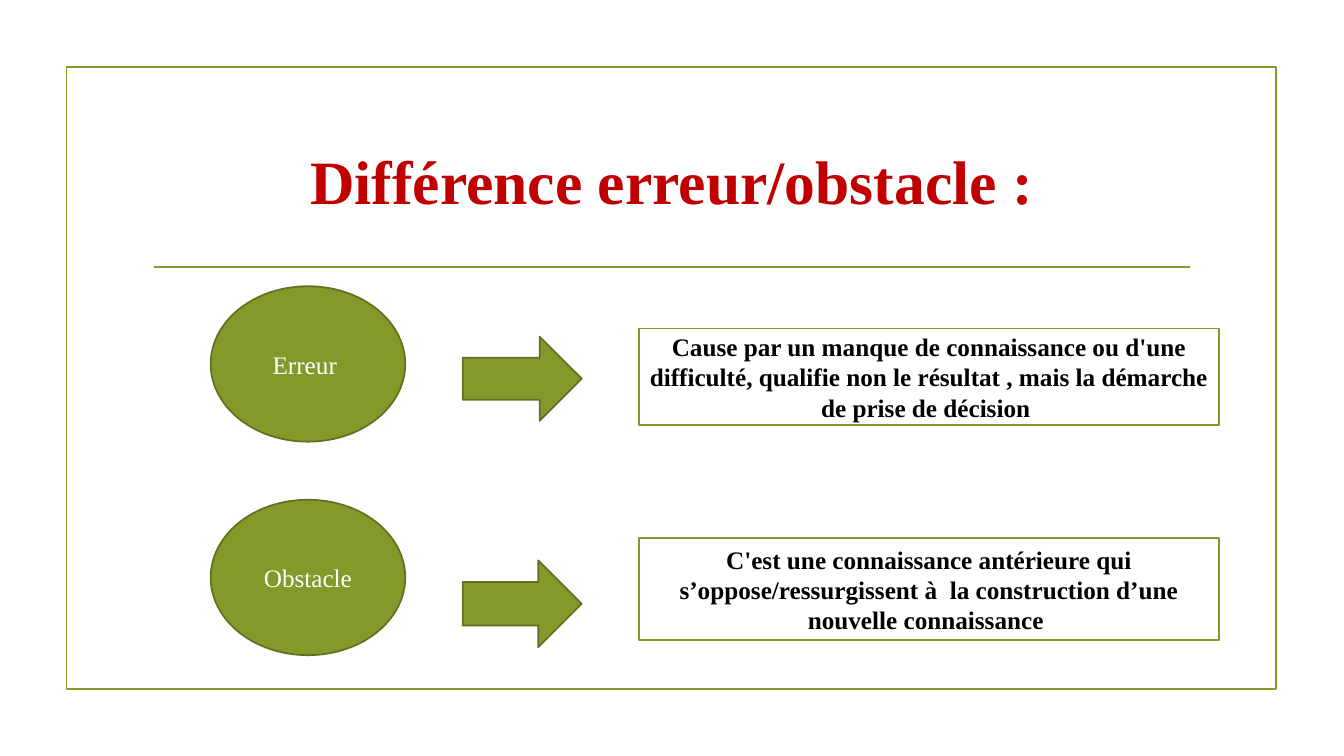
from dataclasses import dataclass

from lxml import etree
from pptx import Presentation
from pptx.dml.color import RGBColor
from pptx.enum import shapes, text
from pptx.oxml import ns
from pptx.util import Pt


@dataclass(frozen=True)
class Theme:
    font: str = "Times New Roman"
    green: RGBColor = RGBColor(0x83, 0x99, 0x2A)
    dark_green: RGBColor = RGBColor(0x61, 0x71, 0x1F)
    red: RGBColor = RGBColor(0xC0, 0x00, 0x00)
    white: RGBColor = RGBColor(0xFF, 0xFF, 0xFF)
    black: RGBColor = RGBColor(0x00, 0x00, 0x00)
    title_size: float = 44
    text_size: float = 18
    line_width: float = 1.25


THEME = Theme()
OVAL_LEFT, ARROW_LEFT, BOX_LEFT = 150.5, 330.5, 456.5

# Term, definition, then (top, height) of the oval, the arrow and the box
ROWS = [
    ("Erreur ",
     "Cause par un manque de connaissance ou d'une difficulté, "
     "qualifie non le résultat , mais la démarche de prise de décision ",
     (204.5, 111), (240.5, 60), (234.7, 69)),
    ("Obstacle",
     "C'est une connaissance antérieure qui s’oppose/ressurgissent à  "
     "la construction d’une nouvelle connaissance ",
     (357, 111), (400.3, 62), (384.5, 72.7)),
]


def write_text(shape, content, size, color, bold=False):
    """Fill a shape with one centred paragraph."""
    frame = shape.text_frame
    frame.word_wrap = True
    frame.auto_size = text.MSO_AUTO_SIZE.NONE
    frame.vertical_anchor = text.MSO_ANCHOR.MIDDLE
    paragraph = frame.paragraphs[0]
    paragraph.alignment = text.PP_ALIGN.CENTER
    run = paragraph.add_run()
    run.text = content
    run.font.name = THEME.font
    run.font.size = Pt(size)
    run.font.bold = bold
    run.font.color.rgb = color


def add_figure(slide, kind, left, top, width, height, fill, line):
    """Add a preset shape; a fill of None leaves it hollow."""
    shape = slide.shapes.add_shape(kind, Pt(left), Pt(top), Pt(width), Pt(height))
    shape.shadow.inherit = False
    if fill is None:
        shape.fill.background()
    else:
        shape.fill.solid()
        shape.fill.fore_color.rgb = fill
    shape.line.color.rgb = line
    shape.line.width = Pt(THEME.line_width)
    return shape


def add_rule(slide, left, right, y):
    rule = slide.shapes.add_connector(
        shapes.MSO_CONNECTOR.STRAIGHT, Pt(left), Pt(y), Pt(right), Pt(y))
    rule.line.color.rgb = THEME.green
    rule.line.width = Pt(THEME.line_width)
    etree.SubElement(rule.element.spPr, ns.qn("a:effectLst"))


def place_title(slide, content):
    title = slide.shapes.title
    title.left, title.top, title.width, title.height = Pt(102), Pt(77), Pt(756), Pt(103)
    write_text(title, content, THEME.title_size, THEME.red, bold=True)


def add_definition_row(slide, term, definition, oval_span, arrow_span, box_span):
    """Add an oval holding the term, an arrow and the boxed definition."""
    kinds = shapes.MSO_SHAPE
    oval = add_figure(slide, kinds.OVAL, OVAL_LEFT, oval_span[0], 139, oval_span[1],
                      THEME.green, THEME.dark_green)
    write_text(oval, term, THEME.text_size, THEME.white)
    add_figure(slide, kinds.RIGHT_ARROW, ARROW_LEFT, arrow_span[0], 85, arrow_span[1],
               THEME.green, THEME.dark_green)
    box = add_figure(slide, kinds.RECTANGLE, BOX_LEFT, box_span[0], 414, box_span[1],
                     THEME.white, THEME.green)
    write_text(box, definition, THEME.text_size, THEME.black, bold=True)


def main():
    presentation = Presentation()
    presentation.slide_width, presentation.slide_height = Pt(960), Pt(540)
    title_only = presentation.slide_layouts[5]
    slide = presentation.slides.add_slide(title_only)

    add_figure(slide, shapes.MSO_SHAPE.RECTANGLE, 47.5, 48, 864, 444, None, THEME.green)
    add_rule(slide, 110, 850, 190.8)
    place_title(slide, "Différence erreur/obstacle :")
    for row in ROWS:
        add_definition_row(slide, *row)

    presentation.save("out.pptx")


if __name__ == "__main__":
    main()
